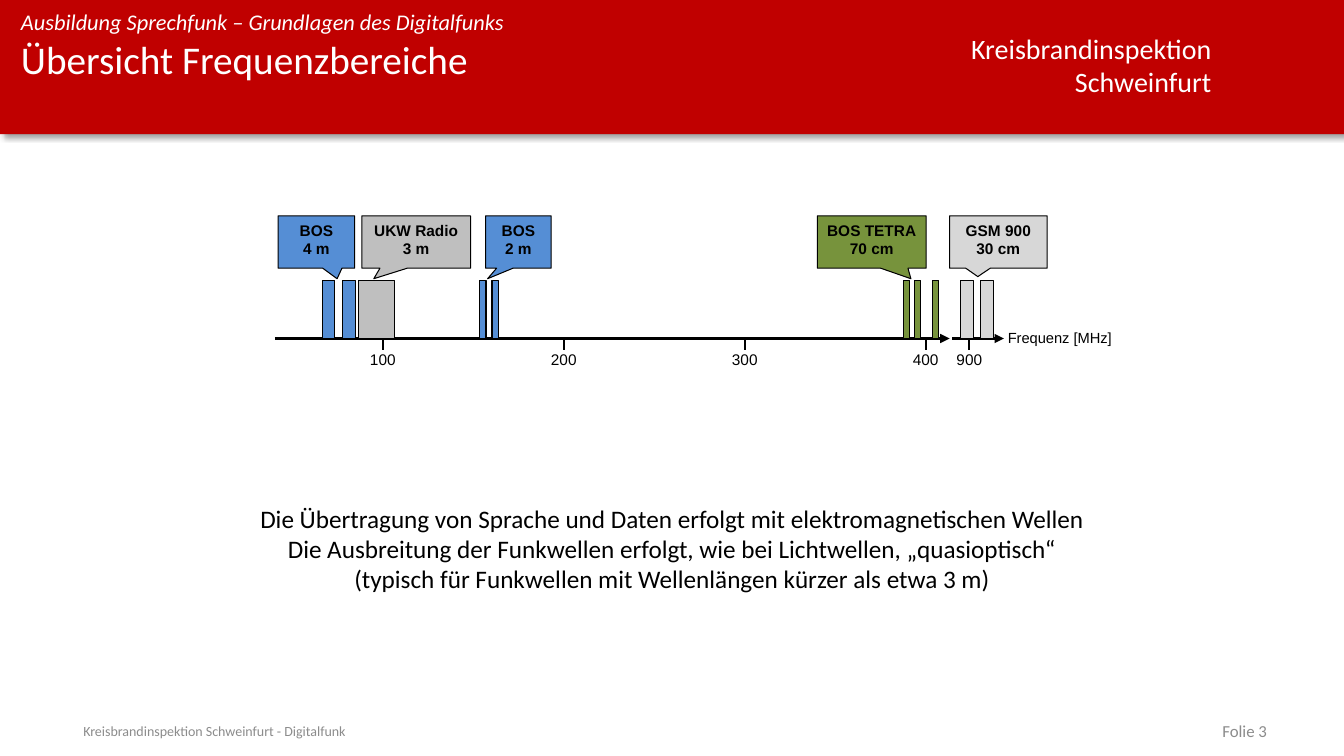
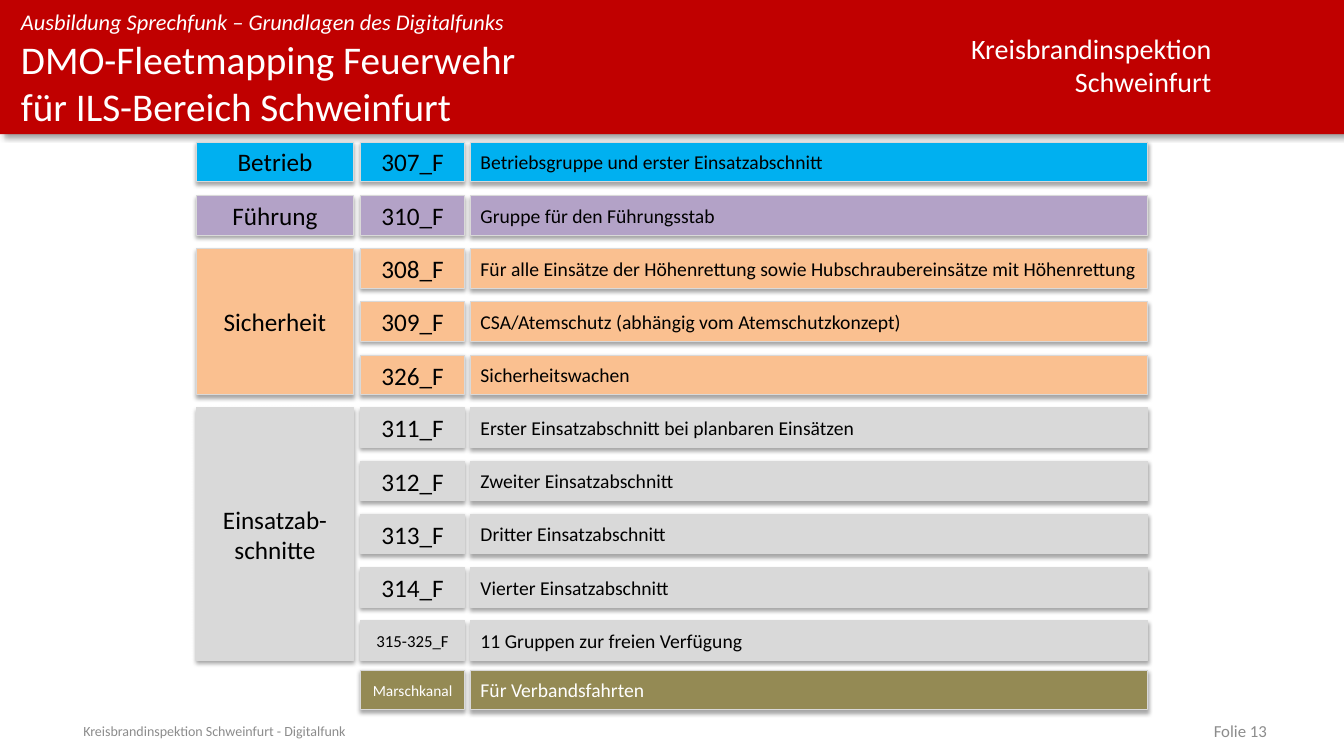
"""Build two slides on radio frequency bands and the DMO fleet mapping."""
from lxml import etree
from pptx import Presentation
from pptx.dml.color import RGBColor
from pptx.enum.shapes import MSO_CONNECTOR, MSO_SHAPE
from pptx.enum.text import MSO_ANCHOR as ANCHOR, PP_ALIGN as ALIGN
from pptx.oxml.ns import qn
from pptx.util import Cm, Pt

RED = RGBColor(0xC0, 0x00, 0x00)
WHITE = RGBColor(0xFF, 0xFF, 0xFF)
BLACK = RGBColor(0x00, 0x00, 0x00)
FOOTER_GREY = RGBColor(0x8C, 0x8C, 0x8C)
BOS_BLUE = RGBColor(0x55, 0x8E, 0xD5)
RADIO_GREY = RGBColor(0xBF, 0xBF, 0xBF)
TETRA_GREEN = RGBColor(0x77, 0x93, 0x3C)
GSM_GREY = RGBColor(0xD7, 0xD7, 0xD7)
CYAN = RGBColor(0x00, 0xB0, 0xF0)
PURPLE = RGBColor(0xB3, 0xA2, 0xC7)
ORANGE = RGBColor(0xFA, 0xC0, 0x90)
LIGHT_GREY = RGBColor(0xD9, 0xD9, 0xD9)
OLIVE = RGBColor(0x94, 0x8A, 0x54)


def write(frame, text, size, color=BLACK, font="Calibri", align=ALIGN.LEFT,
          anchor=ANCHOR.TOP, bold=False, italic=False, margins=(0.25, 0.13)):
    """Fill a text frame, one paragraph per line of text."""
    frame.word_wrap = True
    frame.vertical_anchor = anchor
    frame.margin_left = frame.margin_right = Cm(margins[0])
    frame.margin_top = frame.margin_bottom = Cm(margins[1])
    for index, line in enumerate(text.split("\n")):
        paragraph = frame.add_paragraph() if index else frame.paragraphs[0]
        paragraph.text = line
        paragraph.alignment = align
        for run in paragraph.runs:
            run.font.name = font
            run.font.size = Pt(size)
            run.font.bold = bold
            run.font.italic = italic
            run.font.color.rgb = color


def add_block(slide, box, fill, outline=None, shadow=None, kind=MSO_SHAPE.RECTANGLE):
    """Add a filled shape; shadow is (opacity %, blur pt, distance pt, degrees)."""
    block = slide.shapes.add_shape(kind, *map(Cm, box))
    block.shadow.inherit = False
    block.fill.solid()
    block.fill.fore_color.rgb = fill
    if outline is None:
        block.line.fill.background()
    else:
        block.line.color.rgb = outline
        block.line.width = Pt(0.75)
    if shadow:
        opacity, blur, distance, degrees = shadow
        effects = block._element.spPr.find(qn("a:effectLst"))
        outer = etree.SubElement(effects, qn("a:outerShdw"), blurRad=str(Pt(blur)),
                                 dist=str(Pt(distance)), dir=str(degrees * 60000),
                                 algn="tl", rotWithShape="0")
        tint = etree.SubElement(outer, qn("a:srgbClr"), val=str(BLACK))
        etree.SubElement(tint, qn("a:alpha"), val=str(opacity * 1000))
    return block


prs = Presentation()
prs.slide_width, prs.slide_height = Cm(33.87), Cm(19.05)

slides = []
for title, number in [
    ("Übersicht Frequenzbereiche", 3),
    ("DMO-Fleetmapping Feuerwehr\vfür ILS-Bereich Schweinfurt", 13),
]:
    slide = prs.slides.add_slide(prs.slide_layouts[6])
    add_block(slide, (0, 0, 33.87, 3.38), RED, shadow=(40, 4, 3, 45))
    for box, text, look in [
        ((23, 0.66, 7.78, 1.96), "Kreisbrandinspektion\nSchweinfurt",
         dict(size=20, color=WHITE, align=ALIGN.RIGHT)),
        ((0.53, 0.2, 21.41, 0.69), "Ausbildung Sprechfunk – Grundlagen des Digitalfunks",
         dict(size=16, color=WHITE, italic=True, margins=(0, 0))),
        ((0.53, 0.89, 21.41, 2.51), title,
         dict(size=28, color=WHITE, margins=(0, 0))),
        ((1.85, 18.16, 20.45, 0.51), "Kreisbrandinspektion Schweinfurt - Digitalfunk",
         dict(size=10, color=FOOTER_GREY, anchor=ANCHOR.MIDDLE)),
        ((24.28, 18.16, 7.9, 0.51), f"Folie {number}",
         dict(size=12, color=FOOTER_GREY, align=ALIGN.RIGHT, anchor=ANCHOR.MIDDLE)),
    ]:
        write(slide.shapes.add_textbox(*map(Cm, box)).text_frame, text, **look)
    slides.append(slide)
spectrum, fleetmap = slides

AXIS_Y = 8.53
BAR_HEIGHT = 1.47
ticks = [(str(100 * (step + 1)), 9.65 + 4.56 * step) for step in range(4)]
ticks.append(("900", 24.43))

strokes = [(6.93, AXIS_Y, 23.93, AXIS_Y, 2.25), (24, AXIS_Y, 25.3, AXIS_Y, 2.25)]
strokes += [(x, AXIS_Y, x, 8.81, 1.5) for _, x in ticks]
for x1, y1, x2, y2, weight in strokes:
    stroke = spectrum.shapes.add_connector(MSO_CONNECTOR.STRAIGHT, Cm(x1), Cm(y1), Cm(x2), Cm(y2))
    stroke.line.color.rgb = BLACK
    stroke.line.width = Pt(weight)
    if y1 == y2:
        etree.SubElement(stroke.line._get_or_add_ln(), qn("a:tailEnd"), type="triangle")
    etree.SubElement(stroke._element.spPr, qn("a:effectLst"))

for frequency, x in ticks:
    label = spectrum.shapes.add_textbox(Cm(x - 0.6), Cm(8.69), Cm(1.2), Cm(0.73))
    write(label.text_frame, frequency, 11, font="Arial", align=ALIGN.CENTER, margins=(0, 0.13))
unit = spectrum.shapes.add_textbox(Cm(25.15), Cm(8.15), Cm(3.5), Cm(0.71))
write(unit.text_frame, "Frequenz [MHz]", 10.5, font="Arial")

for band, fill, left, width, pointer, bar_lefts, bar_width in [
    ("UKW Radio\n3 m", RADIO_GREY, 9.12, 2.74, (-0.39, 0.7), [9.04], 0.91),
    ("BOS\n4 m", BOS_BLUE, 7.01, 1.93, (0.27, 0.7), [8.13, 8.64], 0.31),
    ("BOS\n2 m", BOS_BLUE, 12.24, 1.65, (-0.47, 0.7), [12.09, 12.4], 0.16),
    ("GSM 900\n30 cm", GSM_GREY, 23.93, 2.46, (-0.21, 0.66), [24.21, 24.71], 0.32),
    ("BOS TETRA\n70 cm", TETRA_GREEN, 20.6, 2.74, (0.36, 0.7), [22.76, 23.04, 23.5], 0.16),
]:
    for bar_left in bar_lefts:
        add_block(spectrum, (bar_left, AXIS_Y - BAR_HEIGHT, bar_width, BAR_HEIGHT), fill, BLACK)
    callout = add_block(spectrum, (left, 5.44, width, 1.32), fill, BLACK,
                        kind=MSO_SHAPE.RECTANGULAR_CALLOUT)
    callout.adjustments[0], callout.adjustments[1] = pointer
    write(callout.text_frame, band, 11, font="Arial", bold=True, align=ALIGN.CENTER,
          margins=(0, 0.13))

propagation = spectrum.shapes.add_textbox(Cm(6.17), Cm(12.55), Cm(21.54), Cm(2.57))
write(propagation.text_frame,
      "Die Übertragung von Sprache und Daten erfolgt mit elektromagnetischen Wellen\n"
      "Die Ausbreitung der Funkwellen erfolgt, wie bei Lichtwellen, „quasioptisch“\n"
      "(typisch für Funkwellen mit Wellenlängen kürzer als etwa 3 m)",
      18, align=ALIGN.CENTER)

ROW_PITCH = 1.34
ROW_HEIGHT = 1
for purpose, top, fill, color, channels in [
    ("Betrieb", 3.58, CYAN, BLACK,
     [("307_F", 18, "Betriebsgruppe und erster Einsatzabschnitt")]),
    ("Führung", 4.93, PURPLE, BLACK,
     [("310_F", 18, "Gruppe für den Führungsstab")]),
    ("Sicherheit", 6.27, ORANGE, BLACK,
     [("308_F", 18, "Für alle Einsätze der Höhenrettung sowie Hubschraubereinsätze mit Höhenrettung"),
      ("309_F", 18, "CSA/Atemschutz (abhängig vom Atemschutzkonzept)"),
      ("326_F", 18, "Sicherheitswachen")]),
    ("Einsatzab-schnitte", 10.28, LIGHT_GREY, BLACK,
     [("311_F", 18, "Erster Einsatzabschnitt bei planbaren Einsätzen"),
      ("312_F", 18, "Zweiter Einsatzabschnitt"),
      ("313_F", 18, "Dritter Einsatzabschnitt"),
      ("314_F", 18, "Vierter Einsatzabschnitt"),
      ("315-325_F", 12, "11 Gruppen zur freien Verfügung")]),
    ("", 16.89, OLIVE, WHITE,
     [("Marschkanal", 11, "Für Verbandsfahrten")]),
]:
    cells = []
    if purpose:
        group_height = ROW_PITCH * (len(channels) - 1) + ROW_HEIGHT
        cells.append((4.95, top, 3.96, group_height, purpose, 18, ALIGN.CENTER))
    for row, (channel, size, usage) in enumerate(channels):
        row_top = top + row * ROW_PITCH
        cells.append((9.09, row_top, 2.62, ROW_HEIGHT, channel, size, ALIGN.CENTER))
        cells.append((11.86, row_top, 17.07, ROW_HEIGHT, usage, 14, ALIGN.LEFT))
    for *box, text, size, align in cells:
        cell = add_block(fleetmap, box, fill, LIGHT_GREY, shadow=(35, 3.1, 1.8, 90))
        write(cell.text_frame, text, size, color=color, align=align, anchor=ANCHOR.MIDDLE)

prs.save("out.pptx")
